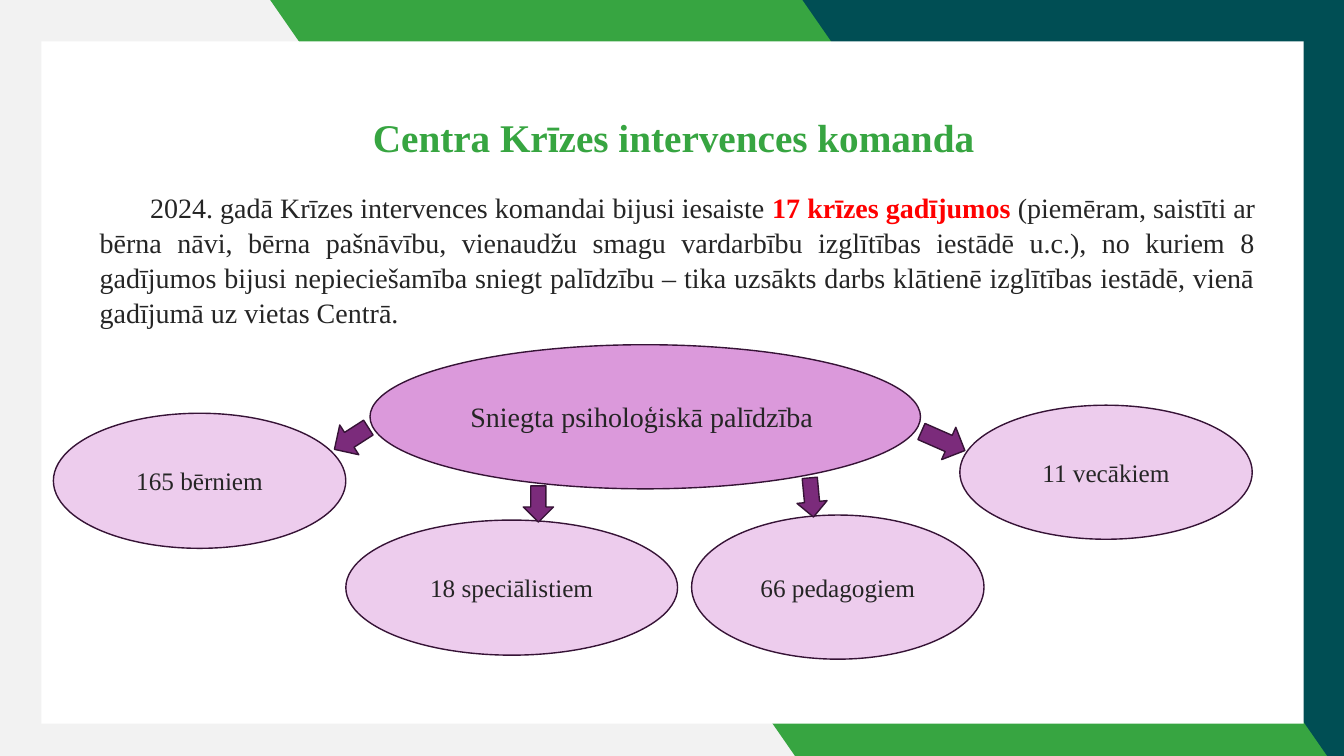
"""Build the slide about the crisis intervention team."""
from dataclasses import dataclass

from pptx import Presentation
from pptx.dml.color import RGBColor
from pptx.enum.shapes import MSO_SHAPE as Shp
from pptx.enum.text import MSO_ANCHOR as Anchor, PP_ALIGN as Align
from pptx.util import Inches, Pt

FONT = "Times New Roman"
COLORS = {
    "grey": "F2F2F2", "teal": "004E54", "green": "37A541", "white": "FFFFFF",
    "text": "252525", "red": "FF0000", "orchid": "DB99DB", "lilac": "EDCCED",
    "purple": "7B2B7B", "outline": "361336",
}


@dataclass
class Box:
    left: float
    top: float
    width: float
    height: float


@dataclass
class Panel:
    box: Box
    color: str
    kind: int = Shp.RECTANGLE


@dataclass
class Bubble:
    text: str
    box: Box
    color: str = "lilac"
    size: int = 18


@dataclass
class Arrow:
    box: Box
    rotation: float = 0


@dataclass
class Span:
    text: str
    color: str = "text"
    bold: bool = False


PANELS = [
    Panel(Box(0, 0, 13.33, 7.54), "grey"),
    Panel(Box(7.94, 0, 5.4, 7.54), "teal"),
    Panel(Box(2.68, 0, 10.51, 7.54), "green", Shp.PARALLELOGRAM),
    Panel(Box(0.41, 0.41, 12.52, 6.77), "white"),
]
TITLE = [Span("Centra Krīzes intervences komanda", "green", True)]
BODY = [
    Span("2024. gadā Krīzes intervences komandai bijusi iesaiste "),
    Span("17 krīzes gadījumos ", "red", True),
    Span("(piemēram, saistīti ar bērna nāvi, bērna pašnāvību, vienaudžu smagu "
         "vardarbību izglītības iestādē u.c.), no kuriem 8 gadījumos bijusi "
         "nepieciešamība sniegt palīdzību – tika uzsākts darbs klātienē "
         "izglītības iestādē, vienā gadījumā uz vietas Centrā. "),
]
BUBBLES = [
    Bubble("Sniegta psiholoģiskā palīdzība ", Box(3.67, 3.42, 5.46, 1.43), "orchid", 20),
    Bubble("165 bērniem", Box(0.53, 4.1, 2.9, 1.34)),
    Bubble("66 pedagogiem", Box(6.86, 5.11, 2.9, 1.43)),
    Bubble("18 speciālistiem", Box(3.43, 5.16, 3.29, 1.34)),
    Bubble("11 vecākiem", Box(9.52, 4.02, 2.9, 1.33)),
]
ARROWS = [
    Arrow(Box(3.31, 4.15, 0.35, 0.4), 57.3),
    Arrow(Box(5.19, 4.82, 0.3, 0.36)),
    Arrow(Box(7.9, 4.74, 0.3, 0.39), 354.6),
    Arrow(Box(9.18, 4.14, 0.35, 0.47), 293.7),
]


def rgb(name: str) -> RGBColor:
    return RGBColor.from_string(COLORS[name])


def place(box: Box) -> list:
    return [Inches(v) for v in (box.left, box.top, box.width, box.height)]


def add_spans(p, spans: list[Span], size: int, align: int) -> None:
    p.alignment = align
    for span in spans:
        r = p.add_run()
        r.text = span.text
        r.font.name, r.font.size, r.font.bold = FONT, Pt(size), span.bold
        r.font.color.rgb = rgb(span.color)


def add_shape(s, kind: int, box: Box, color: str, outlined: bool = True):
    sp = s.shapes.add_shape(kind, *place(box))
    sp.shadow.inherit = False
    sp.fill.solid()
    sp.fill.fore_color.rgb = rgb(color)
    if outlined:
        sp.line.color.rgb = rgb("outline")
        sp.line.width = Pt(1)
    else:
        sp.line.fill.background()
    return sp


def add_panel(s, panel: Panel) -> None:
    sp = add_shape(s, panel.kind, panel.box, panel.color, outlined=False)
    if panel.kind == Shp.PARALLELOGRAM:
        sp.adjustments[0] = 0.694
        sp.element.spPr.xfrm.set("flipH", "1")


def add_text(s, box: Box, spans: list[Span], size: int, align: int):
    tf = s.shapes.add_textbox(*place(box)).text_frame
    tf.word_wrap = True
    p = tf.paragraphs[0]
    add_spans(p, spans, size, align)
    return p


def add_bubble(s, bubble: Bubble) -> None:
    tf = add_shape(s, Shp.OVAL, bubble.box, bubble.color).text_frame
    tf.word_wrap = True
    tf.vertical_anchor = Anchor.MIDDLE
    add_spans(tf.paragraphs[0], [Span(bubble.text)], bubble.size, Align.CENTER)


def add_arrow(s, arrow: Arrow) -> None:
    add_shape(s, Shp.DOWN_ARROW, arrow.box, "purple").rotation = arrow.rotation


def main() -> None:
    prs = Presentation()
    prs.slide_width, prs.slide_height = Inches(13.33), Inches(7.5)
    s = prs.slides.add_slide(prs.slide_layouts[6])
    for panel in PANELS:
        add_panel(s, panel)
    add_text(s, Box(0.64, 1.08, 12.08, 0.57), TITLE, 28, Align.CENTER)
    p = add_text(s, Box(0.89, 1.82, 11.66, 1.87), BODY, 20, Align.JUSTIFY)
    p.line_spacing = 1.05
    p.space_after = Pt(6)
    pPr = p._p.get_or_add_pPr()
    pPr.set("marL", "0")
    pPr.set("indent", str(Inches(0.5)))
    for bubble in BUBBLES:
        add_bubble(s, bubble)
    for arrow in ARROWS:
        add_arrow(s, arrow)
    prs.save("out.pptx")


if __name__ == "__main__":
    main()
